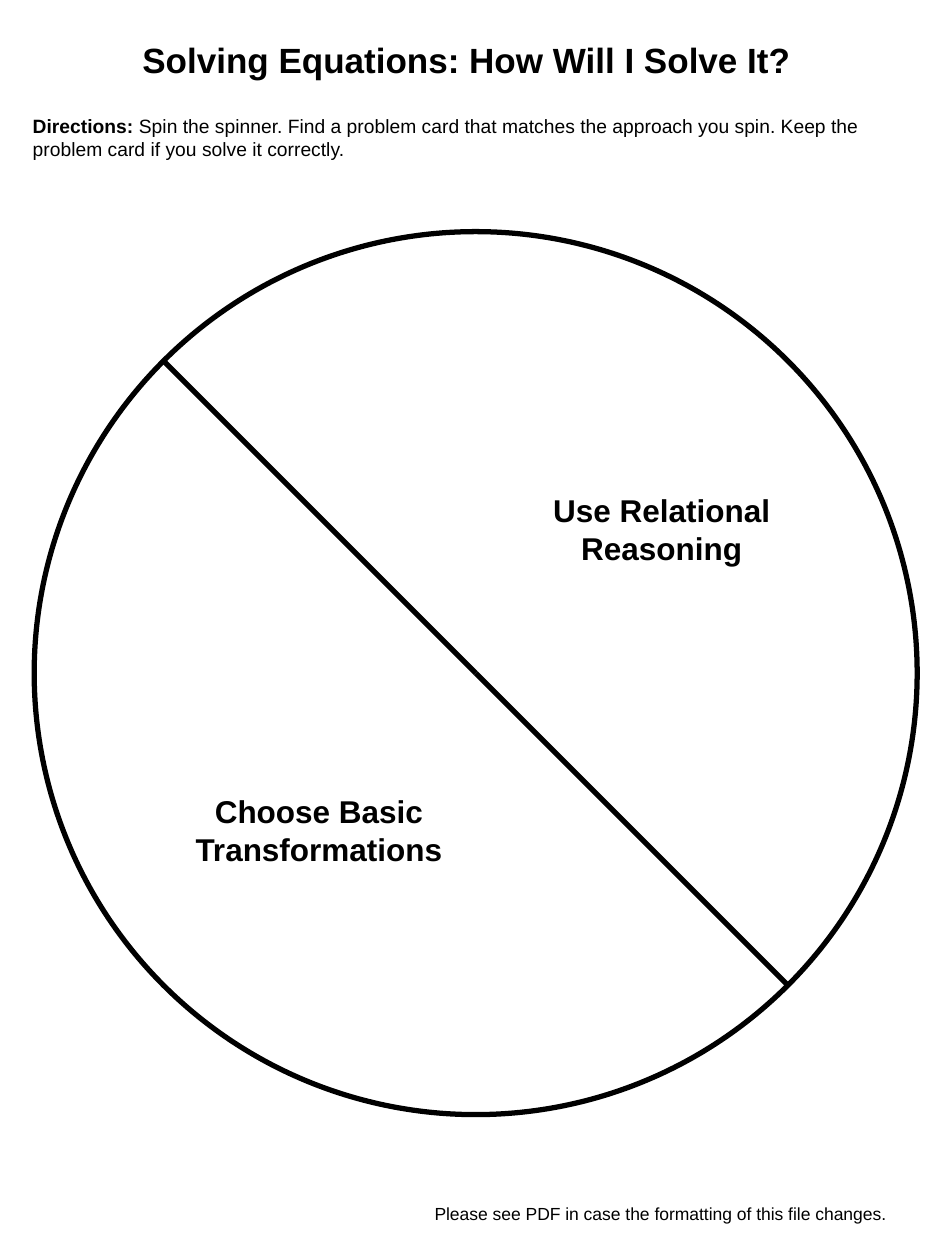
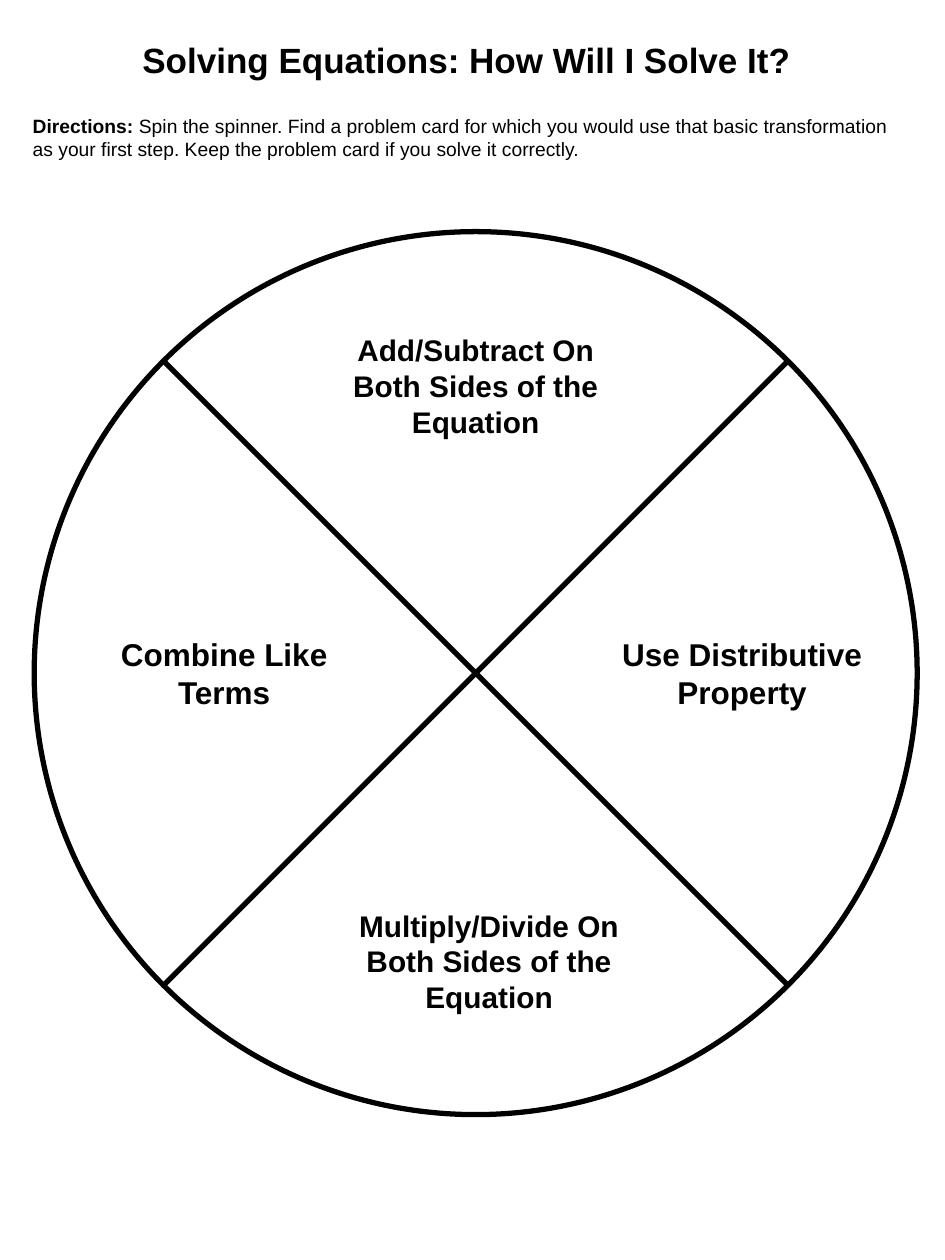
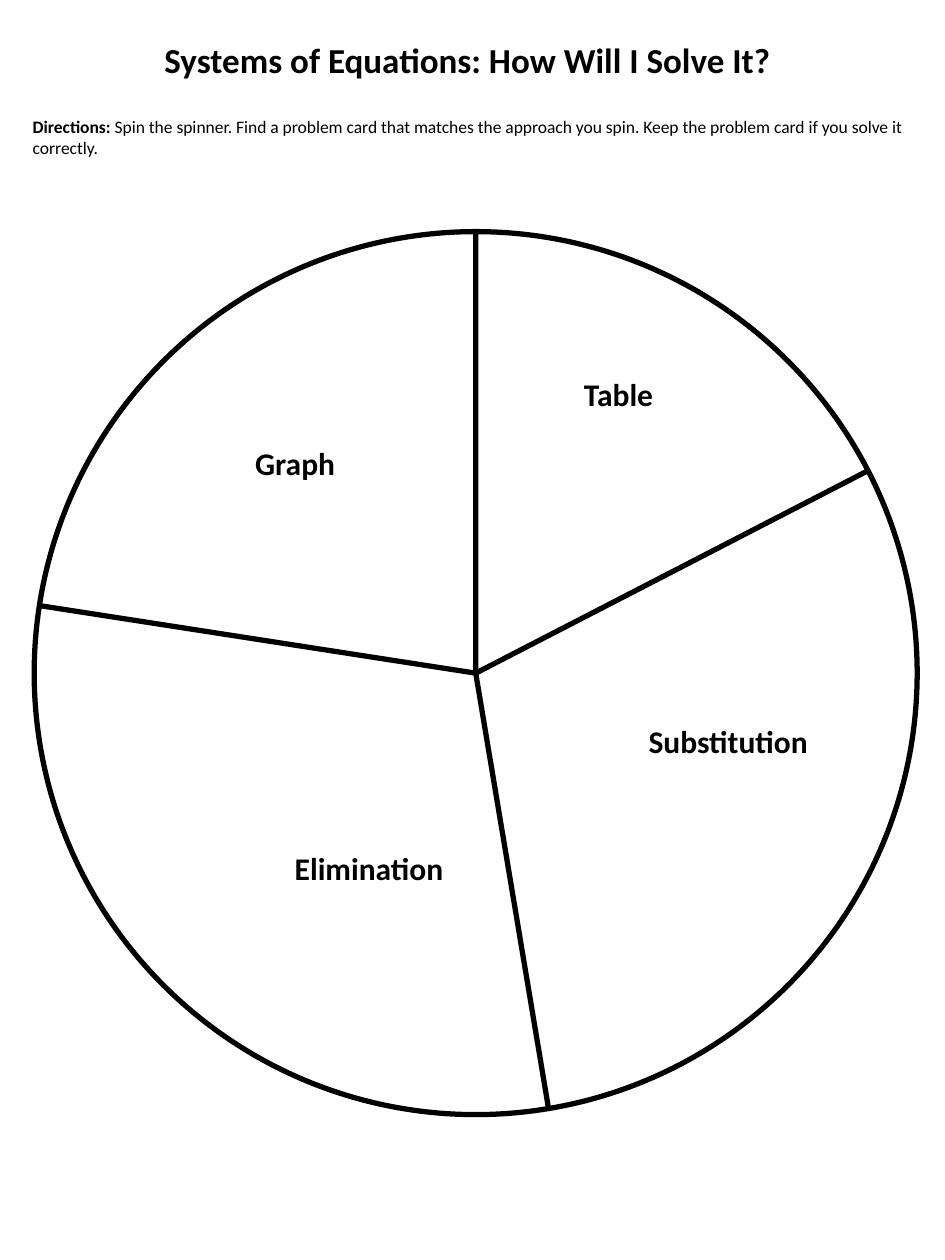
from dataclasses import dataclass
from math import cos, radians, sin

from lxml.etree import SubElement
from pptx import Presentation
from pptx.dml.color import RGBColor
from pptx.enum.shapes import MSO_CONNECTOR, MSO_SHAPE
from pptx.enum.text import MSO_ANCHOR, PP_ALIGN
from pptx.oxml.ns import qn
from pptx.util import Cm, Pt


@dataclass(frozen=True)
class Theme:
    ink: RGBColor = RGBColor(0, 0, 0)
    paper: RGBColor = RGBColor(255, 255, 255)
    title: int = 20
    directions: int = 11
    small: int = 10
    label: int = 18
    long_label: int = 17
    rule: int = 1
    stroke: int = 3


THEME = Theme()
HEADER = (0.41, 0.41, 18.19, 3.14)
WHEEL = (0.69, 4.67, 17.8)
FOOTNOTE = (8.51, 24.13, 10.54, 0.69)
LABEL_W, LABEL_H = 5.8, 3.3


def style_paragraph(p, size, font, bold=None, align=PP_ALIGN.LEFT):
    p.alignment = align
    p.font.size = Pt(size)
    p.font.name = font
    p.font.bold = bold
    p.font.color.rgb = THEME.ink


def add_filled(s, kind, x, y, w, h, line, width):
    sp = s.shapes.add_shape(kind, Cm(x), Cm(y), Cm(w), Cm(h))
    sp.shadow.inherit = False
    sp.fill.solid()
    sp.fill.fore_color.rgb = THEME.paper
    sp.line.color.rgb = line
    sp.line.width = Pt(width)
    return sp


def add_text(s, x, y, w, h, text, size, font, **style):
    tf = s.shapes.add_textbox(Cm(x), Cm(y), Cm(w), Cm(h)).text_frame
    tf.word_wrap = True
    p = tf.paragraphs[0]
    p.text = text
    style_paragraph(p, size, font, **style)
    return tf


def add_spoke(s, x1, y1, x2, y2):
    c = s.shapes.add_connector(MSO_CONNECTOR.STRAIGHT, Cm(x1), Cm(y1), Cm(x2), Cm(y2))
    c.line.color.rgb = THEME.ink
    c.line.width = Pt(THEME.stroke)
    SubElement(c._element.spPr, qn("a:effectLst"))


def add_header(s, box, title, directions, font, size):
    x, y, w, h = box
    row = h / 2
    title_p, directions_p = (
        add_filled(s, MSO_SHAPE.RECTANGLE, x, y + i * row, w, row,
                   THEME.paper, THEME.rule).text_frame.paragraphs[0]
        for i in range(2))
    title_p.text = title
    style_paragraph(title_p, THEME.title, font, bold=True, align=PP_ALIGN.CENTER)
    style_paragraph(directions_p, size, font)
    for text, bold in (("Directions:", True), (" " + directions, False)):
        r = directions_p.add_run()
        r.text = text
        r.font.bold = bold


def add_wheel(s, box, angles, labels, font):
    x, y, d = box
    radius = d / 2
    cx, cy = x + radius, y + radius
    add_filled(s, MSO_SHAPE.OVAL, x, y, d, d, THEME.ink, THEME.stroke)
    for angle in angles:
        a = radians(angle)
        add_spoke(s, cx, cy, cx + radius * cos(a), cy + radius * sin(a))
    for text, dx, dy, size in labels:
        tf = add_text(s, cx + dx - LABEL_W / 2, cy + dy - LABEL_H / 2, LABEL_W, LABEL_H,
                      text, size, font, bold=True, align=PP_ALIGN.CENTER)
        tf.vertical_anchor = MSO_ANCHOR.MIDDLE


def add_spinner_slide(prs, title, directions, angles, labels,
                      font="Arial", size=THEME.directions):
    s = prs.slides.add_slide(prs.slide_layouts[6])
    add_header(s, HEADER, title, directions, font, size)
    add_wheel(s, WHEEL, angles, labels, font)
    return s


def main():
    prs = Presentation()
    prs.slide_width, prs.slide_height = Cm(19.05), Cm(25.4)
    solving = "Solving Equations: How Will I Solve It? "
    approach = ("Spin the spinner. Find a problem card that matches the approach you spin. "
                "Keep the problem card if you solve it correctly.")
    first_step = ("Spin the spinner. Find a problem card for which you would use that basic "
                  "transformation as your first step. Keep the problem card if you solve it "
                  "correctly.")
    big, long = THEME.label, THEME.long_label

    s = add_spinner_slide(prs, solving, approach, (45, 225), (
        ("Use Relational Reasoning", 3.75, -2.9, big),
        ("Choose Basic Transformations", -3.16, 3.16, big)))
    add_text(s, *FOOTNOTE, "Please see PDF in case the formatting of this file changes.",
             THEME.small, "Arial")

    add_spinner_slide(prs, solving, first_step, range(45, 360, 90), (
        ("Use Distributive Property", 5.37, 0, big),
        ("Combine Like Terms", -5.07, 0, big),
        ("Add/Subtract On Both Sides of the Equation", 0, -5.8, long),
        ("Multiply/Divide On Both Sides of the Equation", 0.27, 5.8, long)))

    add_spinner_slide(prs, "Systems of Equations: How Will I Solve It? ", approach,
                      (80.5, 188.8, 270, 332.7), (
        ("Substitution", 5.09, 1.36, big),
        ("Graph", -3.64, -4.23, big),
        ("Elimination", -2.15, 3.92, big),
        ("Table", 2.88, -5.63, big)), font="Calibri", size=THEME.small)

    prs.save("out.pptx")


if __name__ == "__main__":
    main()
